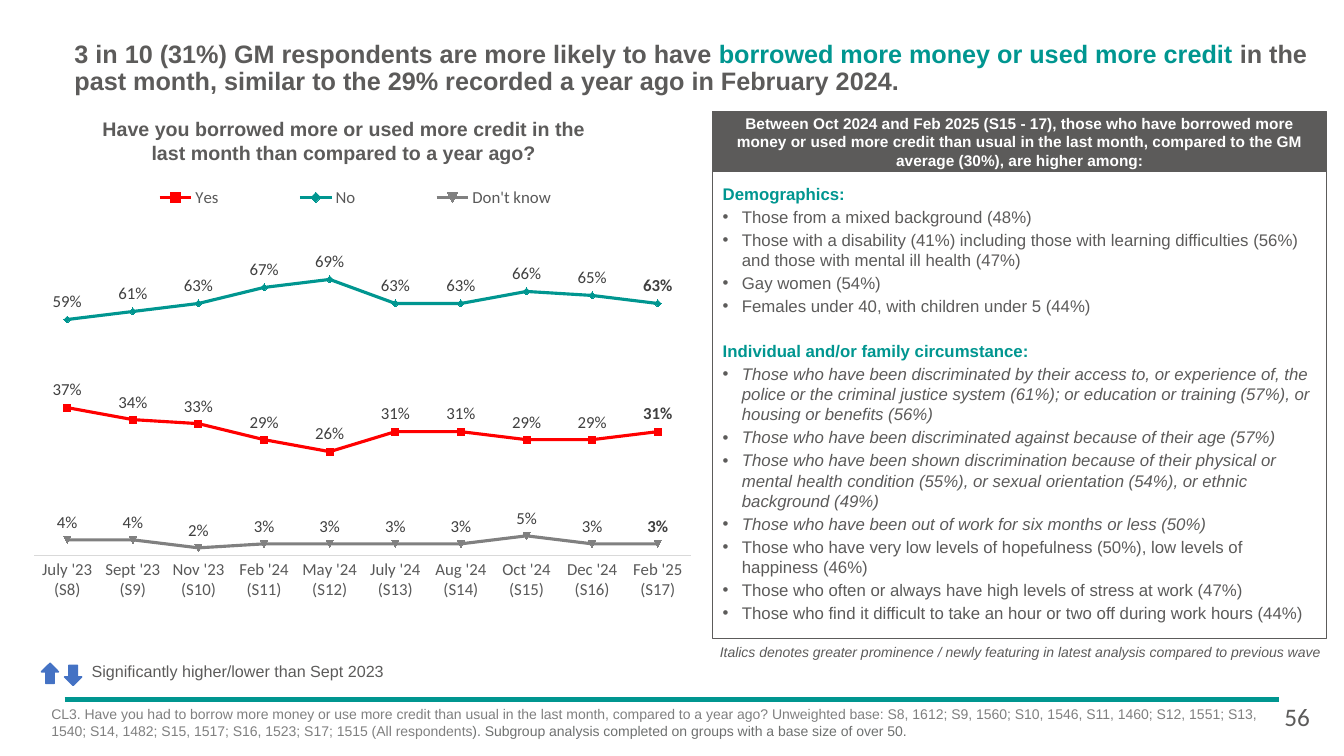
from lxml.etree import SubElement as Sub
from pptx import Presentation
from pptx.chart.data import CategoryChartData as Data
from pptx.dml.color import RGBColor as RGB
from pptx.enum.chart import XL_CHART_TYPE as Kind, XL_LABEL_POSITION as Pos
from pptx.enum.chart import XL_LEGEND_POSITION as Leg, XL_TICK_MARK as Tick
from pptx.enum.shapes import MSO_CONNECTOR as Conn, MSO_SHAPE as Form
from pptx.enum.text import MSO_ANCHOR as Anchor, PP_ALIGN as Align
from pptx.oxml.ns import qn
from pptx.util import Inches, Pt

GREY, TEAL, BLUE, MID = "5C5B5A", "009690", "4472C4", "808080"

TITLE = [
    ("3 in 10 (31%) GM respondents are more likely to have ", GREY),
    ("borrowed more money or used more credit ", TEAL),
    ("in the past month, similar to the 29% recorded a year ago in February 2024.", GREY),
]
ASK = "Have you borrowed more or used more credit in the last month than compared to a year ago?"
WAVES = ["July '23", "Sept '23", "Nov '23", "Feb '24", "May '24",
         "July '24", "Aug '24", "Oct '24", "Dec '24", "Feb '25"]
SERIES = [
    ("Yes", "FF0000", [37, 34, 33, 29, 26, 31, 31, 29, 29, 31]),
    ("No", TEAL, [59, 61, 63, 67, 69, 63, 63, 66, 65, 63]),
    ("Don't know", MID, [4, 4, 2, 3, 3, 3, 3, 5, 3, 3]),
]
HEAD = ("Between Oct 2024 and Feb 2025 (S15 - 17), those who have borrowed more money or used "
        "more credit than usual in the last month, compared to the GM average (30%), are higher among:")
GROUPS = [
    ("Demographics:", [
        ("Those from a mixed background (48%)", False),
        ("Those with a disability (41%) including those with learning difficulties (56%) "
         "and those with mental ill health (47%)", False),
        ("Gay women (54%)", False),
        ("Females under 40, with children under 5 (44%)", False),
    ]),
    ("Individual and/or family circumstance:", [
        ("Those who have been discriminated by their access to, or experience of, the police or the "
         "criminal justice system (61%); or education or training (57%), or housing or benefits (56%)", True),
        ("Those who have been discriminated against because of their age (57%)", True),
        ("Those who have been shown discrimination because of their physical or mental health "
         "condition (55%), or sexual orientation (54%), or ethnic background (49%)", True),
        ("Those who have been out of work for six months or less (50%)", True),
        ("Those who have very low levels of hopefulness (50%), low levels of happiness (46%)", False),
        ("Those who often or always have high levels of stress at work (47%)", False),
        ("Those who find it difficult to take an hour or two off during work hours (44%)", False),
    ]),
]
KEY = "Significantly higher/lower than Sept 2023"
NOTE = ("Italics denotes greater prominence / newly featuring in latest analysis "
        "compared to previous wave")
FOOT = [
    ("CL3. Have you had to borrow more money or use more credit than usual in the last month, "
     "compared to a year ago? Unweighted base: S8, 1612; S9, 1560; S10, 1546, S11, 1460; S12, 1551; "
     "S13, 1540; S14, 1482; S15, 1517; S16, 1523; S17; 1515 (All respondents", MID),
    ("). Subgroup analysis completed on groups with a base size of over 50.", "6F7170"),
]

deck = Presentation()
deck.slide_width, deck.slide_height = Inches(13.33), Inches(7.5)
slide = deck.slides.add_slide(deck.slide_layouts[6])
shapes = slide.shapes


def place(*parts):
    """Turn percentages of the slide's width and height into lengths."""
    sides = (deck.slide_width, deck.slide_height) * 2
    return [int(part * side / 100) for part, side in zip(parts, sides)]


def ink(font, size, color, bold=False, italic=False, name="Arial"):
    """Style a font."""
    font.size, font.bold, font.italic, font.name = Pt(size), bold, italic, name
    font.color.rgb = RGB.from_string(color)


def write(box, runs, size, align=Align.LEFT, **style):
    """Fill the first paragraph of a box with coloured runs."""
    box.text_frame.word_wrap = True
    para = box.text_frame.paragraphs[0]
    para.alignment = align
    for text, color in runs:
        run = para.add_run()
        run.text = text
        ink(run.font, size, color, **style)
    return para


def label(spot, runs, size, **style):
    """Add a text box with one paragraph."""
    box = shapes.add_textbox(*place(*spot))
    write(box, runs, size, **style)
    return box


def block(form, spot, fill, edge, width=0.75):
    """Add a flat preset shape."""
    item = shapes.add_shape(form, *place(*spot))
    item.shadow.inherit = False
    if fill:
        item.fill.solid()
        item.fill.fore_color.rgb = RGB.from_string(fill)
    else:
        item.fill.background()
    item.line.color.rgb = RGB.from_string(edge)
    item.line.width = Pt(width)
    return item


def layout(owner, target, share):
    """Fix the place of a chart part by shares of the chart."""
    for old in owner.findall(qn("c:layout")):
        owner.remove(old)
    frame = owner.makeelement(qn("c:layout"), {})
    manual = Sub(frame, qn("c:manualLayout"))
    if target:
        Sub(manual, qn("c:layoutTarget"), val=target)
    for tag in ("xMode", "yMode"):
        Sub(manual, qn("c:" + tag), val="edge")
    for tag, val in zip("xywh", share):
        Sub(manual, qn("c:" + tag), val=str(val))
    owner.insert(0 if target else 1, frame)


def draw_chart():
    """Add the line chart of answers by wave."""
    data = Data(number_format="0%")
    data.categories = [f"{wave}\n(S{num})" for num, wave in enumerate(WAVES, 8)]
    for name, _, vals in SERIES:
        data.add_series(name, [val / 100 for val in vals])
    chart = shapes.add_chart(Kind.LINE, *place(1.2, 21.73, 50.49, 67.2), data).chart
    ink(chart.font, 10, "000000", name="Calibri")
    chart.has_title = False
    chart.has_legend = True
    legend = chart.legend
    legend.position, legend.include_in_layout = Leg.TOP, False
    ink(legend.font, 12, "595959", name="Calibri")
    axis, scale = chart.category_axis, chart.value_axis
    axis.major_tick_mark = Tick.NONE
    axis.format.line.color.rgb = RGB.from_string("D9D9D9")
    axis.format.line.width = Pt(0.75)
    ink(axis.tick_labels.font, 12, "595959", name="Calibri")
    scale.minimum_scale, scale.maximum_scale = 0, 0.8
    scale.has_major_gridlines = scale.visible = False
    plot = chart.plots[0]
    plot.vary_by_categories = False
    for line, (_, color, _) in zip(plot.series, SERIES):
        line.smooth = False
        line.marker.style = None
        line.format.line.color.rgb = RGB.from_string(color)
        line.format.line.width = Pt(2.25)
        tags = line.data_labels
        tags.show_value, tags.position = True, Pos.ABOVE
        tags.number_format, tags.number_format_is_linked = "0%", False
        ink(tags.font, 12, "404040", name="Calibri")
        last = line.points[len(WAVES) - 1].data_label
        ink(last.font, 12, "404040", bold=True, name="Calibri")
        last.position = Pos.ABOVE
    area = chart.element.find(".//" + qn("c:plotArea"))
    layout(area, "inner", (0.027, 0.14, 0.967, 0.631))
    layout(chart.element.find(".//" + qn("c:legend")), None, (0.1, 0.02, 0.8, 0.09))


def fill_panel(frame):
    """Write the headed bullet lists."""
    frame.word_wrap, frame.vertical_anchor = True, Anchor.TOP
    frame.margin_top = Inches(0.12)
    rows = [row for head, items in GROUPS
            for row in [(head, None)] + items]
    for num, (text, slant) in enumerate(rows):
        para = frame.add_paragraph() if num else frame.paragraphs[0]
        para.text, para.alignment, para.space_after = text, Align.LEFT, Pt(2)
        title = slant is None
        if title and num:
            para.space_before = Pt(16)
        if not title:
            props = para._p.get_or_add_pPr()
            props.set("marL", str(Inches(0.19)))
            props.set("indent", str(-Inches(0.19)))
            Sub(props, qn("a:buFont"), typeface="Arial")
            Sub(props, qn("a:buChar"), char="•")
        ink(para.runs[0].font, 12, TEAL if title else GREY, title, bool(slant))


rule = shapes.add_connector(Conn.STRAIGHT, *place(4.8, 92.53, 95.2, 92.53))
rule.line.color.rgb, rule.line.width = RGB.from_string(TEAL), Pt(3)
Sub(rule._element.spPr, qn("a:effectLst"))

top = label((4.8, 3.33, 93.25, 11.6), TITLE, 18, bold=True).text_frame
top.vertical_anchor, top.paragraphs[0].line_spacing = Anchor.MIDDLE, 0.9
ask = label((7.43, 15.47, 36.31, 6.27), [(ASK, GREY)], 14, align=Align.CENTER, bold=True).text_frame
ask.margin_left = ask.margin_right = ask.margin_top = ask.margin_bottom = 0
draw_chart()

head = block(Form.RECTANGLE, (53.04, 14.8, 45.69, 7.87), GREY, GREY)
head.text_frame.vertical_anchor = Anchor.MIDDLE
write(head, [(HEAD, "FFFFFF")], 11, Align.CENTER, bold=True)
fill_panel(block(Form.RECTANGLE, (53.04, 22.67, 45.69, 61.73), None, GREY).text_frame)

for left, up, turn in ((3.08, 87.73, 180), (4.8, 88, 0)):
    block(Form.DOWN_ARROW, (left, up, 1.28, 2.67), BLUE, BLUE, 1).rotation = turn
label((6.08, 86.8, 23.71, 3.87), [(KEY, GREY)], 11.5).text_frame.word_wrap = False
label((50.86, 84.4, 50.04, 3.73), [(NOTE, GREY)], 10, align=Align.CENTER, italic=True)
label((3.08, 92.67, 91.9, 7.47), FOOT, 10)
label((94.82, 92.13, 3.98, 5.33), [("56", GREY)], 18, name="Calibri")
deck.save("out.pptx")
